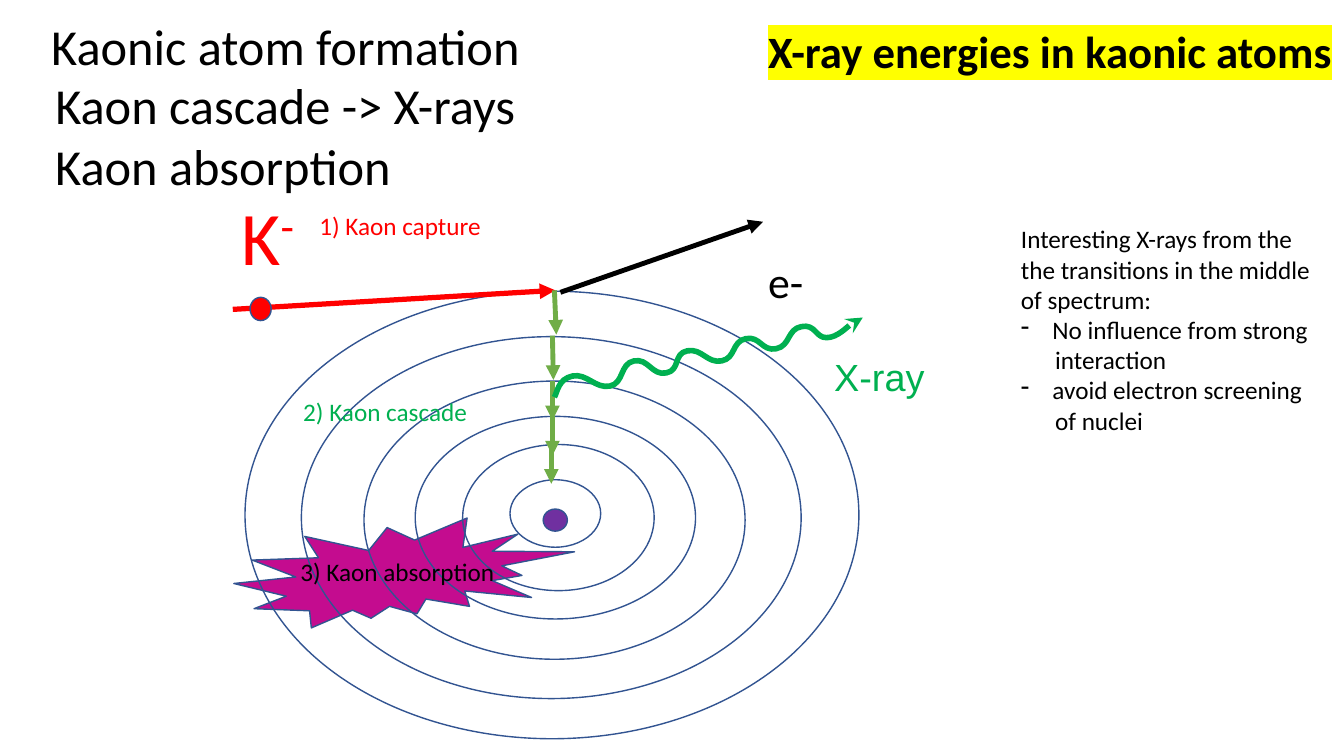
from lxml.etree import SubElement as Sub, Element as Elem
from pptx import Presentation
from pptx.dml.color import RGBColor as Rgb
from pptx.enum.shapes import MSO_CONNECTOR as Conn, MSO_SHAPE as Kind
from pptx.enum.text import MSO_ANCHOR as Anchor, MSO_AUTO_SIZE as Auto, PP_ALIGN as Align
from pptx.oxml.ns import qn
from pptx.util import Pt

RED, GREEN, BLACK = "FF0000", "00B050", "000000"


def paint(target, color):
    if color is None:
        target.background()
    else:
        target.solid()
        target.fore_color.rgb = Rgb.from_string(color)


def write(para, text, size=18, color=BLACK, font="Calibri", bold=False, base=0, mark=None):
    run = para.add_run()
    run.text = text
    run.font.size, run.font.name, run.font.bold = Pt(size), font, bold
    paint(run.font.fill, color)
    props = run.font._element
    if base:
        props.set("baseline", str(base * 1000))
    if mark:
        light = Elem(qn("a:highlight"))
        Sub(light, qn("a:srgbClr"), val=mark)
        props.find(qn("a:solidFill")).addnext(light)


def curve(start, end, lead, trail, steps=8):
    ends = list(zip(start, end, lead, trail))
    for step in range(1, steps + 1):
        t = step / steps
        u = 1 - t
        yield tuple(u**3 * a + 3 * u * u * t * (a + p) + 3 * u * t * t * (b - q) + t**3 * b
                    for a, b, p, q in ends)


class Board:
    edge = "325491"

    def __init__(self, deck):
        self.slide = deck.slides.add_slide(deck.slide_layouts[5])
        self.shapes = self.slide.shapes

    def title(self, box, text, **style):
        head = self.shapes.title
        head.left, head.top, head.width, head.height = map(Pt, box)
        frame = head.text_frame
        frame.word_wrap, frame.auto_size = False, Auto.SHAPE_TO_FIT_TEXT
        frame.vertical_anchor = Anchor.TOP
        para = frame.paragraphs[0]
        para.alignment = Align.LEFT
        write(para, text, **style)

    def text(self, box, text, align=Align.LEFT, **style):
        frame = self.shapes.add_textbox(*map(Pt, box)).text_frame
        frame.word_wrap, frame.auto_size = False, Auto.SHAPE_TO_FIT_TEXT
        para = frame.paragraphs[0]
        para.alignment = align
        write(para, text, **style)
        return frame

    def item(self, frame, text, left=0, bullet=None):
        para = frame.add_paragraph()
        write(para, text)
        props = para._p.get_or_add_pPr()
        props.set("marL", str(Pt(left)))
        if bullet:
            props.set("indent", str(-Pt(left)))
            Sub(props, qn("a:buChar"), char=bullet)

    def shape(self, kind, box, fill=None):
        item = self.shapes.add_shape(kind, *map(Pt, box))
        item.shadow.inherit = False
        paint(item.fill, fill)
        paint(item.line.fill, self.edge)
        item.line.width = Pt(1)

    def stroke(self, item, color, width, head):
        paint(item.line.fill, color)
        item.line.width = Pt(width)
        Sub(item.line._get_or_add_ln(), qn("a:tailEnd"), type=head)

    def arrow(self, ends, color, width=3.5):
        item = self.shapes.add_connector(Conn.STRAIGHT, *map(Pt, ends))
        self.stroke(item, color, width, "triangle")
        Sub(item._element.spPr, qn("a:effectLst"))

    def wave(self, nodes, tip, color, width):
        slopes = [(2, -3)] + [(10.3, -2)] * (len(nodes) - 3) + [(8, 0), (3, -2)]
        dots = [dot for pair in zip(nodes, nodes[1:], slopes, slopes[1:]) for dot in curve(*pair)]
        path = self.shapes.build_freeform(*map(Pt, nodes[0]))
        path.add_line_segments([tuple(map(Pt, dot)) for dot in dots + [tip]], close=False)
        item = path.convert_to_shape()
        item.shadow.inherit = False
        paint(item.fill, None)
        self.stroke(item, color, width, "stealth")


def main():
    deck = Presentation()
    deck.slide_width, deck.slide_height = Pt(960), Pt(540)
    board = Board(deck)
    board.title((541.4, 13, 422, 46), "X-ray energies in kaonic atoms",
                size=32, bold=True, mark="FFFF00")
    heads = [(29.5, 7.2, 353, "Kaonic atom formation"),
             (32.4, 49.7, 348, "Kaon cascade -> X-rays"),
             (32.4, 92.9, 257, "Kaon absorption")]
    for x, y, w, text in heads:
        board.text((x, y, w, 51), text, size=36)

    board.shape(Kind.EXPLOSION2, (167, 370, 243.4, 78.5), "C40C8F")
    board.shape(Kind.OVAL, (388, 363.6, 17.3, 15.8), "7030A0")
    orbits = [(175, 208, 438.5, 319.7), (215.3, 240.5, 357, 258.5),
              (260, 272.2, 272.2, 198.7), (296.6, 297.4, 200.2, 144.7),
              (330.5, 317.5, 136.8, 104.4), (364.3, 342.7, 64.8, 48.2)]
    for orbit in orbits:
        board.shape(Kind.OVAL, orbit)

    board.arrow((166.3, 221, 396.7, 207.4), RED, 3.75)
    board.shape(Kind.OVAL, (178.6, 212.4, 15.1, 16.6), RED)
    board.arrow((400.3, 208.8, 545, 158.4), BLACK)
    drops = [(396, 207.4, 397.4, 239), (394.6, 239.8, 395.3, 271.4),
             (394.6, 272.2, 394.6, 300.2), (394.6, 297.4, 394.6, 325.4),
             (393.8, 317.5, 393.8, 345.6)]
    for drop in drops:
        board.arrow(drop, "70AD47")
    nodes = [(396, 283.7), (409, 268.6), (435.6, 275.8), (452.9, 257.8),
             (475.9, 266.4), (491, 250.6), (515.5, 257.8), (532.8, 241.9),
             (554.4, 249.1), (572.4, 233.3), (590.4, 241.2), (608.4, 231.1)]
    board.wave(nodes, (616.3, 226.8), GREEN, 4)

    kaon = board.text((157.7, 131.8, 67, 72.7), "K", Align.CENTER, size=54, color=RED)
    write(kaon.paragraphs[0], "-", size=54, color=RED, base=30)
    board.text((527.8, 172, 67, 51), "e-", Align.CENTER, size=54, base=30)
    ray = board.text((584.6, 250.6, 87, 36), "X-ray", Align.CENTER,
                     size=27, color=GREEN, font="Arial")
    ray.margin_left = ray.margin_right = ray.margin_top = ray.margin_bottom = 0
    ray.vertical_anchor = Anchor.MIDDLE
    ray.auto_size = Auto.NONE
    board.text((221, 146.9, 130.3, 29), "1) Kaon capture", color=RED)
    board.text((209.5, 279.4, 133.2, 29), "2) Kaon cascade", color=GREEN)
    board.text((207.4, 393.8, 154.8, 29), "3) Kaon absorption")

    note = board.text((722.2, 156.2, 227.5, 160), "Interesting X-rays from the")
    rows = [("the transitions in the middle",), ("of spectrum:",),
            ("No influence from strong", 22.5, "-"), ("interaction", 24.4),
            ("avoid electron screening", 22.5, "-"), ("of nuclei", 24.4)]
    for row in rows:
        board.item(note, *row)
    deck.save("out.pptx")


if __name__ == "__main__":
    main()
